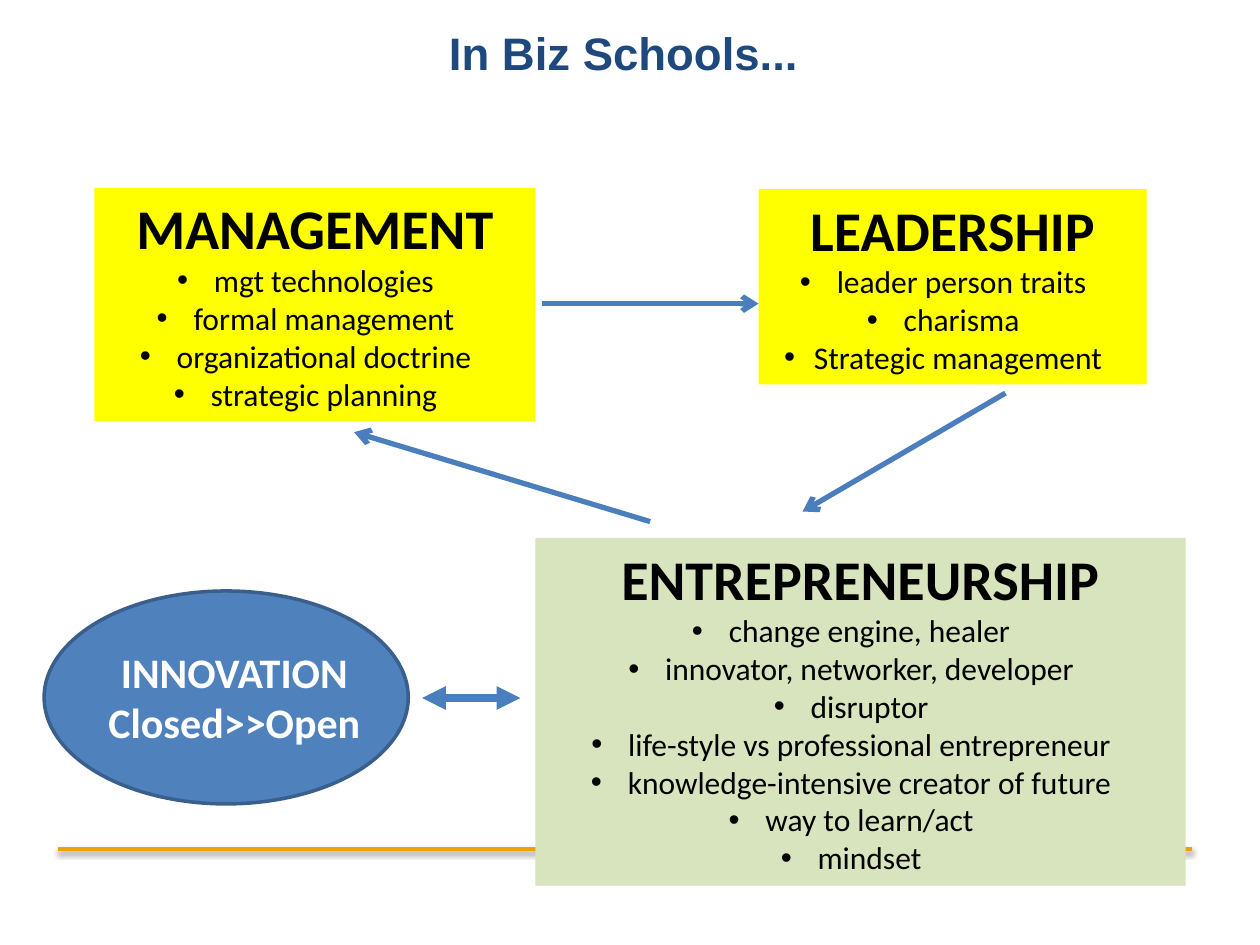
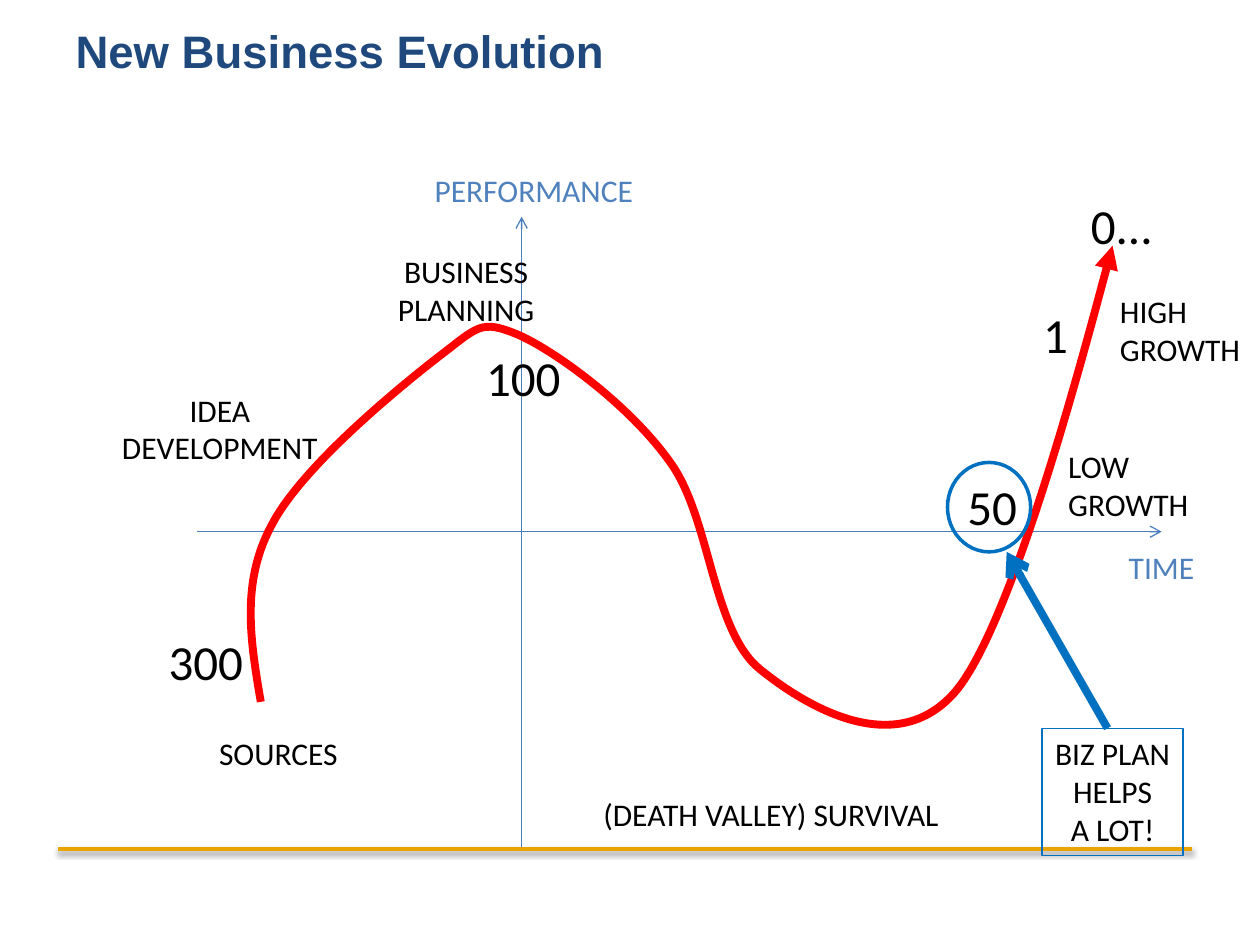
from dataclasses import dataclass
from itertools import chain
from lxml.etree import SubElement
from pptx import Presentation
from pptx.dml.color import RGBColor
from pptx.enum.shapes import MSO_CONNECTOR as Connector, MSO_SHAPE as Shape
from pptx.enum.text import MSO_ANCHOR as Anchor, MSO_AUTO_SIZE as AutoSize, PP_ALIGN as Align
from pptx.oxml.ns import qn
from pptx.util import Inches, Pt

COLORS = {
    "title": "1F497D", "band": "E9A400", "arrow": "4B7EBC", "accent": "4F81BD",
    "outline": "3A5F8C", "yellow": "FFFF00", "green": "D7E4BD", "black": "000000",
    "white": "FFFFFF", "red": "FF0000", "blue": "0070C0",
}
Point = tuple[float, float]
Box = tuple[float, float, float, float]


@dataclass(frozen=True)
class Card:
    heading: str
    box: Box
    fill: str
    bullets: tuple[str, ...]


@dataclass(frozen=True)
class Arrow:
    start: Point
    end: Point
    color: str = "arrow"
    width: float = 3
    head: str = ""
    tail: str = "arrow"


@dataclass(frozen=True)
class Label:
    text: str
    box: Box
    size: float = 18
    color: str = "black"
    align: Align = Align.LEFT
    bold: bool = False


CARDS = (
    Card("MANAGEMENT", (0.75, 1.49, 3.5, 1.85), "yellow",
         (" mgt technologies", " formal management", " organizational doctrine",
          " strategic planning")),
    Card("LEADERSHIP", (6.02, 1.5, 3.08, 1.55), "yellow",
         (" leader person traits", " charisma", "Strategic management")),
    Card("ENTREPRENEURSHIP", (4.25, 4.27, 5.16, 2.76), "green",
         (" change engine, healer", " innovator, networker, developer", " disruptor",
          " life-style vs professional entrepreneur",
          " knowledge-intensive creator of future", " way to learn/act", " mindset")),
)
CYCLE_ARROWS = (
    Arrow((4.3, 2.41), (6.02, 2.41)),
    Arrow((7.98, 3.12), (6.37, 4.06)),
    Arrow((5.16, 4.14), (2.81, 3.43)),
)
INNOVATION = Label("INNOVATION\nClosed>>Open", (0.75, 5.08, 2.22, 0.91), 24, "white",
                   Align.CENTER, True)
INNOVATION_ARROW = Arrow((3.35, 5.54), (4.13, 5.54), width=4.5, head="triangle",
                         tail="triangle")
AXES = (
    Arrow((4.14, 6.72), (4.14, 1.72), width=0.75),
    Arrow((1.56, 4.22), (9.22, 4.22), width=0.75),
)
CURVE_START = (2.07, 5.57)
CURVE = (
    ((1.99, 5.1), (1.91, 4.63), (2.15, 4.18)),
    ((2.38, 3.72), (3.15, 3.09), (3.47, 2.84)),
    ((3.8, 2.59), (3.81, 2.53), (4.12, 2.66)),
    ((4.43, 2.8), (5.01, 3.23), (5.32, 3.67)),
    ((5.64, 4.11), (5.65, 5), (6.03, 5.31)),
    ((6.4, 5.61), (7.12, 6.04), (7.59, 5.48)),
    ((8.05, 4.92), (8.83, 1.95), (8.83, 1.95)),
)
STAGES = (
    Label("SOURCES", (1.64, 5.78, 1.15, 0.4)),
    Label("BUSINESS\nPLANNING", (3.05, 1.95, 1.3, 0.71), align=Align.CENTER),
    Label("IDEA\nDEVELOPMENT", (0.86, 3.05, 1.77, 0.71), align=Align.CENTER),
    Label("(DEATH VALLEY) SURVIVAL", (4.69, 6.26, 2.89, 0.4)),
    Label("HIGH\nGROWTH", (8.79, 2.27, 1.16, 0.71)),
    Label("LOW\nGROWTH", (8.38, 3.5, 1.16, 0.71)),
    Label("TIME", (8.86, 4.3, 0.73, 0.4), color="accent"),
    Label("PERFORMANCE", (3.35, 1.31, 1.79, 0.4), color="accent"),
    Label("100", (3.76, 2.71, 0.8, 0.57), 28),
    Label("50", (7.58, 3.73, 0.6, 0.57), 28),
    Label("1", (8.18, 2.37, 0.4, 0.57), 28),
    Label("0...", (8.56, 1.5, 0.7, 0.57), 28),
    Label("300", (1.24, 4.96, 0.8, 0.57), 28),
)


def rgb(name: str) -> RGBColor:
    return RGBColor.from_string(COLORS[name])


def inches(values) -> list:
    return [Inches(value) for value in values]


def write_text(shape, text: str, *, size: float = 18, color: str = "black",
               font: str = "Calibri", bold: bool = False, align: Align = Align.LEFT,
               bullet: bool = False, append: bool = False) -> None:
    frame = shape.text_frame
    for index, line in enumerate(text.split("\n")):
        is_first = index == 0 and not append
        paragraph = frame.paragraphs[0] if is_first else frame.add_paragraph()
        paragraph.alignment = align
        if bullet:
            properties = paragraph._p.get_or_add_pPr()
            SubElement(properties, qn("a:buFont"), typeface="Arial")
            SubElement(properties, qn("a:buChar"), char="•")
        run = paragraph.add_run()
        run.text = line
        run.font.name = font
        run.font.size = Pt(size)
        run.font.bold = bold
        run.font.color.rgb = rgb(color)


def style_line(line, color: str, width: float, head: str = "", tail: str = "") -> None:
    line.color.rgb = rgb(color)
    line.width = Pt(width)
    for tag, kind in (("a:headEnd", head), ("a:tailEnd", tail)):
        if kind:
            SubElement(line._get_or_add_ln(), qn(tag), type=kind)


def add_arrow(parent, arrow: Arrow):
    connector = parent.shapes.add_connector(
        Connector.STRAIGHT, *inches(arrow.start + arrow.end))
    style_line(connector.line, arrow.color, arrow.width, arrow.head, arrow.tail)
    return SubElement(connector._element.spPr, qn("a:effectLst"))


def add_band(slide) -> None:
    effects = add_arrow(slide, Arrow((0.46, 6.74), (9.46, 6.74), "band", 2, tail=""))
    shadow = SubElement(effects, qn("a:outerShdw"), blurRad=str(Pt(3.1)),
                        dist=str(Pt(1.6)), dir="5400000", rotWithShape="0")
    color = SubElement(shadow, qn("a:srgbClr"), val=COLORS["black"])
    SubElement(color, qn("a:alpha"), val="38000")


def add_panel(parent, kind: Shape, box: Box, *, fill: str = "", line: str = "",
              width: float = 2):
    shape = parent.shapes.add_shape(kind, *inches(box))
    shape.shadow.inherit = False
    if fill:
        shape.fill.solid()
        shape.fill.fore_color.rgb = rgb(fill)
    else:
        shape.fill.background()
    if line:
        style_line(shape.line, line, width)
    else:
        shape.line.fill.background()
    return shape


def fit_text(shape, wrap: bool) -> None:
    frame = shape.text_frame
    frame.word_wrap = wrap
    frame.auto_size = AutoSize.SHAPE_TO_FIT_TEXT
    frame.vertical_anchor = Anchor.TOP


def add_label(slide, label: Label) -> None:
    shape = slide.shapes.add_textbox(*inches(label.box))
    fit_text(shape, wrap=False)
    write_text(shape, label.text, size=label.size, color=label.color,
               align=label.align, bold=label.bold)


def add_card(slide, card: Card) -> None:
    shape = add_panel(slide, Shape.RECTANGLE, card.box, fill=card.fill)
    fit_text(shape, wrap=True)
    write_text(shape, card.heading, size=32, bold=True, align=Align.CENTER)
    write_text(shape, "\n".join(card.bullets), align=Align.CENTER, bullet=True, append=True)


def add_curve(slide) -> None:
    builder = slide.shapes.build_freeform(*inches(CURVE_START))
    knots = chain.from_iterable(CURVE)
    builder.add_line_segments([inches(knot) for knot in knots], close=False)
    curve = builder.convert_to_shape()
    outline = next(curve._element.iter(qn("a:path")))
    segments = outline.findall(qn("a:lnTo"))
    for first in range(0, len(segments), 3):
        bezier = SubElement(outline, qn("a:cubicBezTo"))
        for segment in segments[first:first + 3]:
            bezier.append(segment[0])
            outline.remove(segment)
    curve.shadow.inherit = False
    curve.fill.background()
    style_line(curve.line, "red", 4.5, tail="triangle")


def start_slide(presentation, title: str, box: Box, align: Align):
    slide = presentation.slides.add_slide(presentation.slide_layouts[5])
    add_band(slide)
    shape = slide.shapes.title
    shape.left, shape.top, shape.width, shape.height = inches(box)
    shape.text_frame.vertical_anchor = Anchor.MIDDLE
    write_text(shape, title, size=26, color="title", font="Arial", bold=True, align=align)
    return slide


def build_schools(presentation) -> None:
    slide = start_slide(presentation, "In Biz Schools... ", (0.5, -0.01, 9, 0.85), Align.CENTER)
    add_panel(slide, Shape.OVAL, (0.35, 4.69, 2.89, 1.69), fill="accent", line="outline")
    for card in CARDS:
        add_card(slide, card)
    for arrow in CYCLE_ARROWS:
        add_arrow(slide, arrow)
    add_label(slide, INNOVATION)
    add_arrow(slide, INNOVATION_ARROW)


def build_evolution(presentation) -> None:
    slide = start_slide(presentation, "New Business Evolution", (0.5, 0.13, 9, 0.54), Align.LEFT)
    axes = slide.shapes.add_group_shape()
    for axis in AXES:
        add_arrow(axes, axis)
    add_curve(slide)
    for stage in STAGES:
        add_label(slide, stage)
    advice = slide.shapes.add_group_shape()
    add_panel(advice, Shape.OVAL, (7.52, 3.67, 0.66, 0.71), line="blue")
    add_arrow(advice, Arrow((8.79, 5.78), (7.99, 4.38), "blue", 4.5))
    note = add_panel(advice, Shape.RECTANGLE, (8.27, 5.78, 1.12, 1.01), line="blue", width=0.75)
    fit_text(note, wrap=False)
    write_text(note, "BIZ PLAN\nHELPS\nA LOT!", align=Align.CENTER)


def main() -> None:
    presentation = Presentation()
    presentation.slide_width, presentation.slide_height = Inches(10), Inches(7.5)
    build_schools(presentation)
    build_evolution(presentation)
    presentation.save("out.pptx")


if __name__ == "__main__":
    main()
